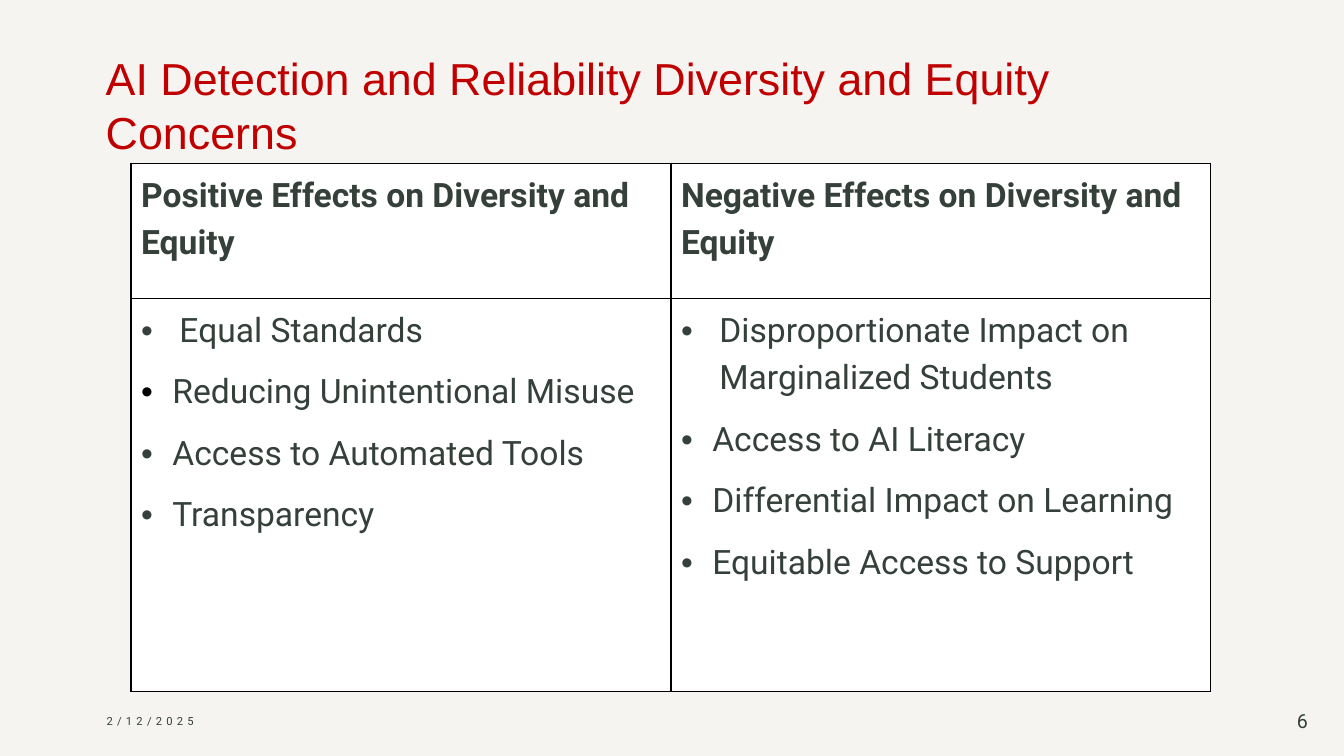
from lxml import etree
from pptx import Presentation
from pptx.dml.color import RGBColor
from pptx.enum.shapes import MSO_SHAPE
from pptx.enum.text import MSO_ANCHOR, PP_ALIGN
from pptx.oxml.ns import qn
from pptx.util import Inches, Pt

RECTANGLE = MSO_SHAPE.RECTANGLE
MIDDLE, BOTTOM = MSO_ANCHOR.MIDDLE, MSO_ANCHOR.BOTTOM
LEFT, RIGHT = PP_ALIGN.LEFT, PP_ALIGN.RIGHT

COLORS = {"veil": "C0B7A5", "title": "C00000", "text": "35403A",
          "line": "000000", "cell": "FFFFFF"}
WIDTH, HEIGHT = 13.33, 7.5
WIDE_INDENT, INDENT = 0.38, 0.31
EFFECTS = [
    ("Positive Effects on Diversity and Equity",
     ["Equal Standards", "Reducing Unintentional Misuse",
      "Access to Automated Tools", "Transparency"]),
    ("Negative Effects on Diversity and Equity",
     ["Disproportionate Impact on Marginalized Students", "Access to AI Literacy",
      "Differential Impact on Learning", "Equitable Access to Support"]),
]
BLACK_BULLETS = {"Reducing Unintentional Misuse"}


def add_node(parent, tag, **attributes):
    """Append a DrawingML element to its parent and return it."""
    node = etree.SubElement(parent, qn(tag))
    for name, value in attributes.items():
        node.set(name, str(value))
    return node


def write_text(para, text, size=24, font="Roboto", color="text", bold=False,
               align=LEFT, tracking=None):
    """Write one formatted run into a paragraph."""
    para.alignment = align
    span = para.add_run()
    span.text = text
    span.font.size = Pt(size)
    span.font.name = font
    span.font.bold = bold
    span.font.color.rgb = RGBColor.from_string(COLORS[color])
    if tracking:
        span.font._element.set("spc", str(tracking * 100))


def add_label(page, box, text, anchor=MIDDLE, **style):
    """Place a wrapping text box with one paragraph."""
    frame = page.shapes.add_textbox(*map(Inches, box)).text_frame
    frame.word_wrap = True
    frame.vertical_anchor = anchor
    write_text(frame.paragraphs[0], text, **style)


def add_veil(page, box, opacity):
    """Tint the page with a translucent rectangle."""
    veil = page.shapes.add_shape(RECTANGLE, *map(Inches, box))
    veil.shadow.inherit = False
    veil.line.fill.background()
    veil.fill.solid()
    veil.fill.fore_color.rgb = RGBColor.from_string(COLORS["veil"])
    color = veil._element.spPr.find(".//" + qn("a:srgbClr"))
    add_node(color, "a:alpha", val=opacity * 1000)


def set_spacing(para):
    """Apply the spacing shared by all table paragraphs."""
    para.line_spacing = 1.2
    para.space_before = Pt(10)


def set_bullet(para, indent, color):
    """Give a paragraph a hanging round bullet."""
    props = para._p.get_or_add_pPr()
    props.set("marL", str(Inches(indent)))
    props.set("indent", str(-Inches(indent)))
    add_node(add_node(props, "a:buClr"), "a:srgbClr", val=COLORS[color])
    add_node(props, "a:buFont", typeface="Arial")
    add_node(props, "a:buChar", char="•")


def style_cell(cell):
    """Frame a cell with thin lines and fill it."""
    props = cell._tc.get_or_add_tcPr()
    for side in ("a:lnL", "a:lnR", "a:lnT", "a:lnB"):
        line = add_node(props, side, w=Pt(1))
        add_node(add_node(line, "a:solidFill"), "a:srgbClr", val=COLORS["line"])
    cell.fill.solid()
    cell.fill.fore_color.rgb = RGBColor.from_string(COLORS["cell"])


def add_effects_table(page, box, header_height):
    """Fill a box with one column of headed bullets per kind of effect."""
    left, top, width, height = box
    table = page.shapes.add_table(2, len(EFFECTS), *map(Inches, box)).table
    table.rows[0].height = Inches(header_height)
    table.rows[1].height = Inches(height - header_height)
    for column, (heading, points) in enumerate(EFFECTS):
        table.columns[column].width = Inches(width / len(EFFECTS))
        header, body = table.cell(0, column), table.cell(1, column)
        style_cell(header)
        style_cell(body)
        para = header.text_frame.paragraphs[0]
        write_text(para, heading, bold=True)
        set_spacing(para)
        for index, point in enumerate(points):
            frame = body.text_frame
            para = frame.add_paragraph() if index else frame.paragraphs[0]
            write_text(para, point)
            set_spacing(para)
            set_bullet(para, INDENT if index else WIDE_INDENT,
                       "line" if point in BLACK_BULLETS else "text")


def add_footer(page, box):
    """Place the date at the left and the page number at the right of a box."""
    left, top, width, height = box
    number_width = 0.57
    add_label(page, (left, top, 3, height), "2/12/2025", size=8, tracking=3)
    add_label(page, (left + width - number_width, top, number_width, height), "6",
              size=14, align=RIGHT)


def main():
    """Build and save the slide."""
    deck = Presentation()
    deck.slide_width, deck.slide_height = Inches(WIDTH), Inches(HEIGHT)
    page = deck.slides.add_slide(deck.slide_layouts[6])
    add_veil(page, (0, 0, WIDTH, HEIGHT), opacity=15)
    add_label(page, (0.95, 0.27, 11.49, 1.35),
              "AI Detection and Reliability Diversity and Equity Concerns",
              anchor=BOTTOM, size=32, font="Arial", color="title")
    add_footer(page, (0.96, 6.95, 12.11, 0.4))
    add_effects_table(page, (1.3, 1.62, 10.71, 5.24), header_height=1.34)
    deck.save("out.pptx")


if __name__ == "__main__":
    main()
